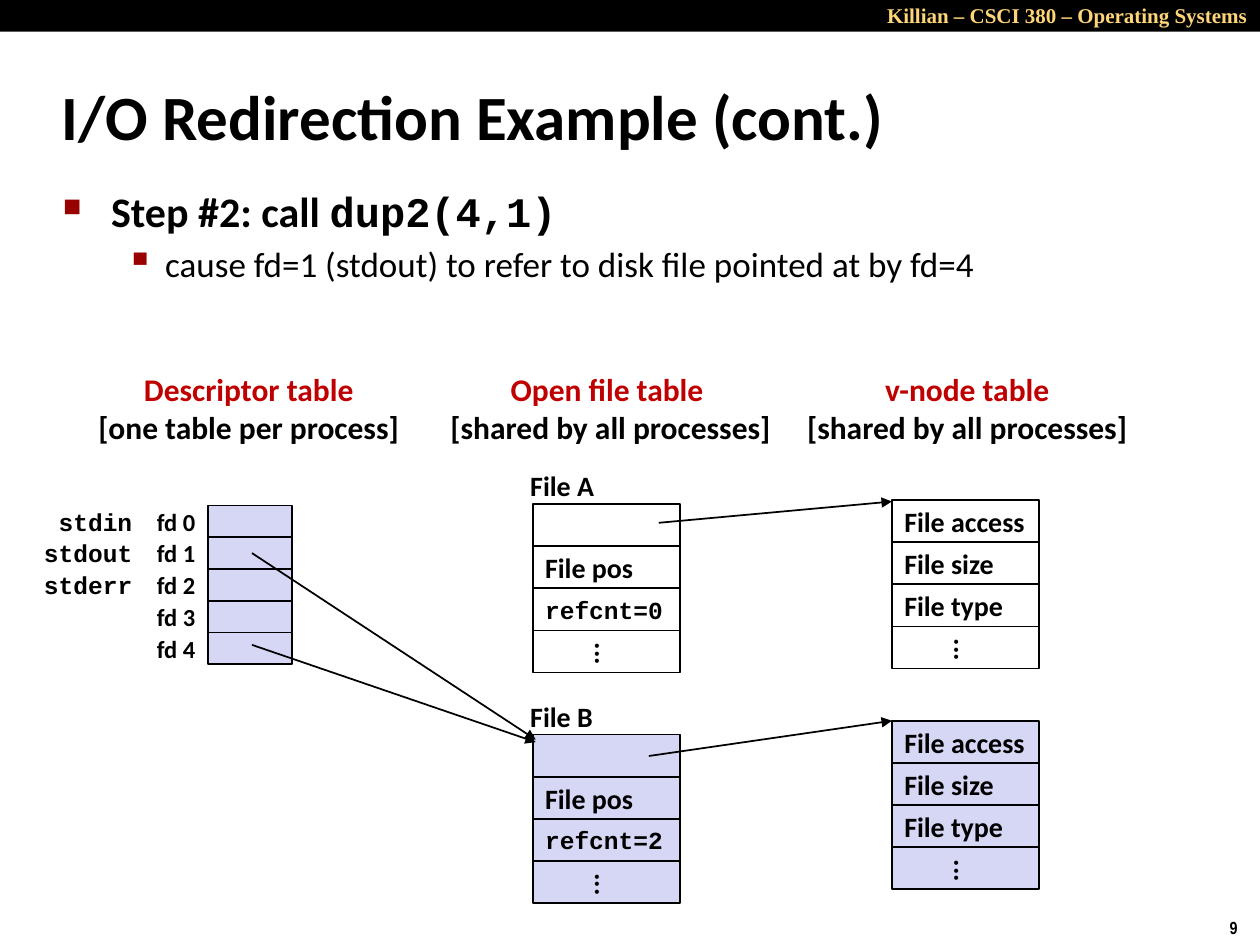
from lxml.etree import SubElement
from pptx import Presentation
from pptx.dml.color import RGBColor
from pptx.enum.shapes import MSO_CONNECTOR, MSO_SHAPE
from pptx.enum.text import MSO_ANCHOR as ANCHOR, MSO_AUTO_SIZE as FIT, PP_ALIGN as ALIGN
from pptx.oxml.ns import qn
from pptx.util import Cm, Pt

COLORS = {"black": "000000", "white": "FFFFFF", "lilac": "D6D6F5",
          "red": "C00000", "bullet": "990000", "gold": "FFD579"}
SANS, MONO = "Calibri", "Courier New"

# Content
HEADER = "Killian – CSCI 380 – Operating Systems"
PAGE = "9"
TITLE = "I/O Redirection Example (cont.)"
BULLETS = [  # runs (text, font), size, bold, left margin, hanging, symbol, symbol %
    ([("Step #2: call ", SANS), ("dup2(4,1)", MONO)], 24, True, 0.97, 0.97, "■", 60),
    ([("cause fd=1 (stdout) to refer to disk file pointed at by fd=4", SANS)],
     20, False, 2.06, 0.79, "▪", 110),
]
HEADINGS = [  # left, width, name, note
    (1.7, 6.63, "Descriptor table", "[one table per process]"),
    (8.79, 7.04, "Open file table ", "[shared by all processes]"),
    (15.98, 7.04, "v-node table", "[shared by all processes]"),
]
DESCRIPTORS = ["fd 0", "fd 1", "fd 2", "fd 3", "fd 4"]
STREAMS = ["stdin", "stdout", "stderr"]
VNODE = ["File access", "File size", "File type", "..."]
STACKS = [  # left, top, fill, rows
    (10.74, 10.16, "white", ["", "File pos", "refcnt=0", "..."]),
    (10.74, 14.81, "lilac", ["", "File pos", "refcnt=2", "..."]),
    (17.98, 10.08, "white", VNODE),
    (17.98, 14.53, "lilac", VNODE),
]
FILE_LABELS = [("File A", 9.32), ("File B", 13.97)]
ARROWS = [  # start x, y, end x, y
    (5.08, 11.15, 10.8, 14.91),
    (5.08, 13.0, 10.8, 14.96),
    (13.28, 10.54, 17.98, 10.11),
    (13.08, 15.24, 17.98, 14.53),
]

# Sizes in cm
FD_LEFT, FD_TOP, FD_W, FD_H = 4.19, 10.19, 1.7, 0.64
CELL_W, CELL_H = 2.97, 0.85


def rgb(name):
    return RGBColor.from_string(COLORS[name])


def add_run(p, text, size, font=SANS, color="black", bold=True):
    r = p.add_run()
    r.text = text
    for key, value in {"size": Pt(size), "name": font, "bold": bold}.items():
        setattr(r.font, key, value)
    r.font.color.rgb = rgb(color)


def set_frame(tf, **values):
    frame = {"word_wrap": False, "auto_size": FIT.NONE, "vertical_anchor": ANCHOR.MIDDLE}
    for key, value in {**frame, **values}.items():
        setattr(tf, key, value)


def add_text(slide, box, lines, align=ALIGN.LEFT, **frame):
    """Add a text box; each line is a dict of add_run arguments."""
    tf = slide.shapes.add_textbox(*map(Cm, box)).text_frame
    set_frame(tf, **frame)
    for i, line in enumerate(lines):
        p = tf.add_paragraph() if i else tf.paragraphs[0]
        p.alignment = align
        add_run(p, **line)


def add_box(slide, box, fill, line="black"):
    sp = slide.shapes.add_shape(MSO_SHAPE.RECTANGLE, *map(Cm, box))
    sp.shadow.inherit = False
    sp.fill.solid()
    sp.fill.fore_color.rgb = rgb(fill)
    sp.line.color.rgb = rgb(line)
    sp.line.width = Pt(1)
    return sp


def add_stack(slide, left, top, fill, rows):
    for i, text in enumerate(rows):
        sp = add_box(slide, (left, top + i * CELL_H, CELL_W, CELL_H), fill)
        if not text:
            continue
        tf = sp.text_frame
        set_frame(tf)
        p = tf.paragraphs[0]
        p.alignment = ALIGN.LEFT
        if text.startswith("refcnt"):
            add_run(p, text, 14, MONO)
        else:
            add_run(p, text, 16)
        if text == "...":
            tf._txBody.bodyPr.set("vert", "eaVert")


def add_arrow(slide, *ends):
    line = slide.shapes.add_connector(MSO_CONNECTOR.STRAIGHT, *map(Cm, ends))
    line.line.color.rgb = rgb("black")
    line.line.width = Pt(1)
    SubElement(line.line._get_or_add_ln(), qn("a:tailEnd"), type="triangle")
    SubElement(line._element.spPr, qn("a:effectLst"))


def set_bullet(p, margin, hanging, symbol, percent):
    pPr = p._p.get_or_add_pPr()
    pPr.set("marL", str(Cm(margin)))
    pPr.set("indent", str(-Cm(hanging)))
    color = SubElement(pPr, qn("a:buClr"))
    SubElement(color, qn("a:srgbClr"), val=COLORS["bullet"])
    SubElement(pPr, qn("a:buSzPct"), val=str(percent * 1000))
    SubElement(pPr, qn("a:buChar"), char=symbol)


def add_title(slide):
    title = slide.shapes.title
    box = {"left": 0.99, "top": 1.27, "width": 21.08, "height": 2.11}
    for key, value in box.items():
        setattr(title, key, Cm(value))
    set_frame(title.text_frame, word_wrap=True)
    p = title.text_frame.paragraphs[0]
    p.alignment = ALIGN.LEFT
    add_run(p, TITLE, 36)


def add_bullets(slide):
    tf = slide.shapes.add_textbox(Cm(1.02), Cm(3.61), Cm(23.95), Cm(2.74)).text_frame
    set_frame(tf, word_wrap=True, vertical_anchor=ANCHOR.TOP)
    for i, (runs, size, bold, margin, hanging, symbol, percent) in enumerate(BULLETS):
        p = tf.add_paragraph() if i else tf.paragraphs[0]
        p.level = i
        p.space_before = Pt(size * 0.2)
        set_bullet(p, margin, hanging, symbol, percent)
        for text, font in runs:
            add_run(p, text, size, font, bold=bold)


def main():
    prs = Presentation()
    prs.slide_width, prs.slide_height = Cm(25.4), Cm(19.05)
    slide = prs.slides.add_slide(prs.slide_layouts[5])

    add_box(slide, (0, 0, 25.4, 0.64), "black").line.fill.background()
    add_text(slide, (16.71, -0.08, 8.69, 0.76),
             [dict(text=HEADER, size=12, font="Times New Roman", color="gold")],
             ALIGN.RIGHT, word_wrap=True, vertical_anchor=ANCHOR.TOP)
    add_text(slide, (24.54, 18.36, 0.86, 0.69),
             [dict(text=PAGE, size=10, font="Arial Narrow")], vertical_anchor=ANCHOR.TOP)
    add_title(slide)
    add_bullets(slide)

    for left, width, name, note in HEADINGS:
        add_text(slide, (left, 7.32, width, 1.8),
                 [dict(text=name, size=18, color="red"), dict(text=note, size=18)],
                 ALIGN.CENTER)

    for i, text in enumerate(DESCRIPTORS):
        top = FD_TOP + i * FD_H
        add_box(slide, (FD_LEFT, top, FD_W, FD_H), "lilac")
        add_text(slide, (FD_LEFT - FD_W, top, FD_W, FD_H),
                 [dict(text=text, size=14)], ALIGN.RIGHT)
    for i, text in enumerate(STREAMS):
        add_text(slide, (0.63, FD_TOP - 0.1 + i * FD_H, 2.29, 0.84),
                 [dict(text=text, size=14, font=MONO)], ALIGN.RIGHT)

    for stack in STACKS:
        add_stack(slide, *stack)
    for text, top in FILE_LABELS:
        add_text(slide, (10.44, top, 1.8, 0.94), [dict(text=text, size=16)])
    for arrow in ARROWS:
        add_arrow(slide, *arrow)

    prs.save("out.pptx")


if __name__ == "__main__":
    main()
